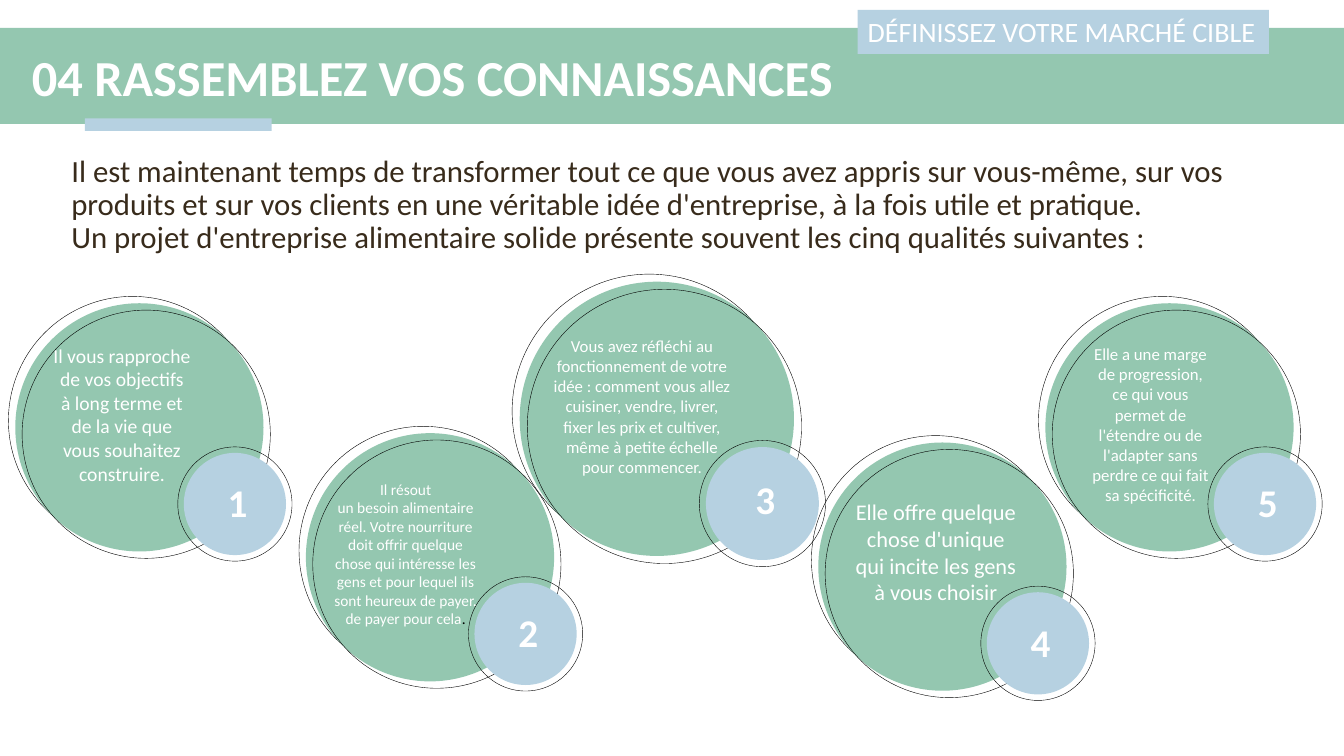
from pptx import Presentation
from pptx.dml.color import RGBColor
from pptx.enum.shapes import MSO_SHAPE
from pptx.enum.text import MSO_ANCHOR, PP_ALIGN
from pptx.util import Pt

HUES = {"green": "94C7B0", "blue": "B6D1E1", "white": "FFFFFF", "brown": "382B1B", "black": "000000"}
FONT = "Calibri"

TITLE = "04 RASSEMBLEZ VOS CONNAISSANCES"
TAG = "DÉFINISSEZ VOTRE MARCHÉ CIBLE"
INTRO = [
    "Il est maintenant temps de transformer tout ce que vous avez appris sur vous-même, sur vos produits et sur vos clients en une véritable idée d'entreprise, à la fois utile et pratique.",
    "Un projet d'entreprise alimentaire solide présente souvent les cinq qualités suivantes :",
]
TRAITS = [
    {"num": "1", "at": (6, 211.7), "scale": 1, "box": (31, 242, 112.3, 126), "size": 14,
     "text": ["Il vous rapproche de vos objectifs à long terme et de la vie que vous souhaitez construire."]},
    {"num": "3", "at": (365.8, 195.8), "scale": 1.105, "box": (385.2, 236.2, 146.9, 108.7), "size": 12,
     "text": ["Vous avez réfléchi au fonctionnement de votre idée : comment vous allez cuisiner, vendre, livrer, fixer les prix et cultiver, même à petite échelle pour commencer."]},
    {"num": "5", "at": (741.8, 211.7), "scale": 1, "box": (771.8, 242, 100.1, 123.8), "size": 12,
     "text": ["Elle a une marge de progression, ce qui vous permet de l'étendre ou de l'adapter sans perdre ce qui fait sa spécificité."]},
    {"num": "4", "at": (579.6, 311.2), "scale": 1, "box": (602.6, 352.1, 131.8, 104.4), "size": 16,
     "text": ["Elle offre quelque chose d'unique qui incite les gens à vous choisir"]},
    {"num": "2", "at": (213.6, 304.5), "scale": 1, "box": (229.7, 339.1, 120.2, 113.8), "size": 11,
     "text": ["Il résout",
              "un besoin alimentaire réel. Votre nourriture doit offrir quelque chose qui intéresse les gens et pour lequel ils sont heureux de payer.",
              [("de payer pour cela", "white"), (".", "black")]]},
]
DISCS = [
    (0, 0, 177.3, None),
    (4.9, 4.9, 177.3, "green"),
    (9.8, 9.8, 177.3, None),
    (125.3, 111.8, 73, "blue"),
    (121, 107.5, 81.6, None),
]
LABEL = (133.1, 126.7, 61.2, 41)

deck = Presentation()
deck.slide_width, deck.slide_height = Pt(960), Pt(540)
slide = deck.slides.add_slide(deck.slide_layouts[6])


def tint(name):
    return RGBColor.from_string(HUES[name])


def draw(kind, box, fill=None):
    shape = slide.shapes.add_shape(kind, *map(Pt, box))
    shape.shadow.inherit = False
    if fill:
        shape.fill.solid()
        shape.fill.fore_color.rgb = tint(fill)
        shape.line.fill.background()
    else:
        shape.fill.background()
        shape.line.color.rgb = tint("black")
        shape.line.width = Pt(0.28)
    return shape


def write(paras, box=None, shape=None, size=12, hue="white", bold=False,
          align=PP_ALIGN.LEFT, anchor=MSO_ANCHOR.TOP, space=None, wrap=True):
    shape = shape or slide.shapes.add_textbox(*map(Pt, box))
    frame = shape.text_frame
    frame.word_wrap = wrap
    frame.vertical_anchor = anchor
    for i, runs in enumerate(paras):
        para = frame.paragraphs[0] if i == 0 else frame.add_paragraph()
        para.alignment = align
        if space:
            para.line_spacing = space
        for text, tone in [(runs, hue)] if isinstance(runs, str) else runs:
            run = para.add_run()
            run.text = text
            run.font.name = FONT
            run.font.size = Pt(size)
            run.font.bold = bold
            run.font.color.rgb = tint(tone)


draw(MSO_SHAPE.RECTANGLE, (0, 20, 960, 68.6), "green")
draw(MSO_SHAPE.RECTANGLE, (60.6, 84.6, 133.4, 8.9), "blue")
write([TITLE], (15.8, 28.8, 859, 56.9), size=36, bold=True, anchor=MSO_ANCHOR.MIDDLE, space=0.9)
write(INTRO, (43.9, 108, 866.2, 80.6), size=22, hue="brown", space=Pt(23.4))
tag = draw(MSO_SHAPE.RECTANGLE, (612.7, 7, 293.6, 31.5), "blue")
write([TAG], shape=tag, size=20, wrap=False)

for trait in TRAITS:
    left, top = trait["at"]
    scale = trait["scale"]
    for x, y, side, fill in DISCS:
        draw(MSO_SHAPE.OVAL, (left + x * scale, top + y * scale, side * scale, side * scale), fill)
    x, y, w, h = (n * scale for n in LABEL)
    write([trait["num"]], (left + x, top + y, w, h), size=28, bold=True, align=PP_ALIGN.CENTER)

for trait in TRAITS:
    write(trait["text"], trait["box"], size=trait["size"], align=PP_ALIGN.CENTER)

deck.save("out.pptx")
